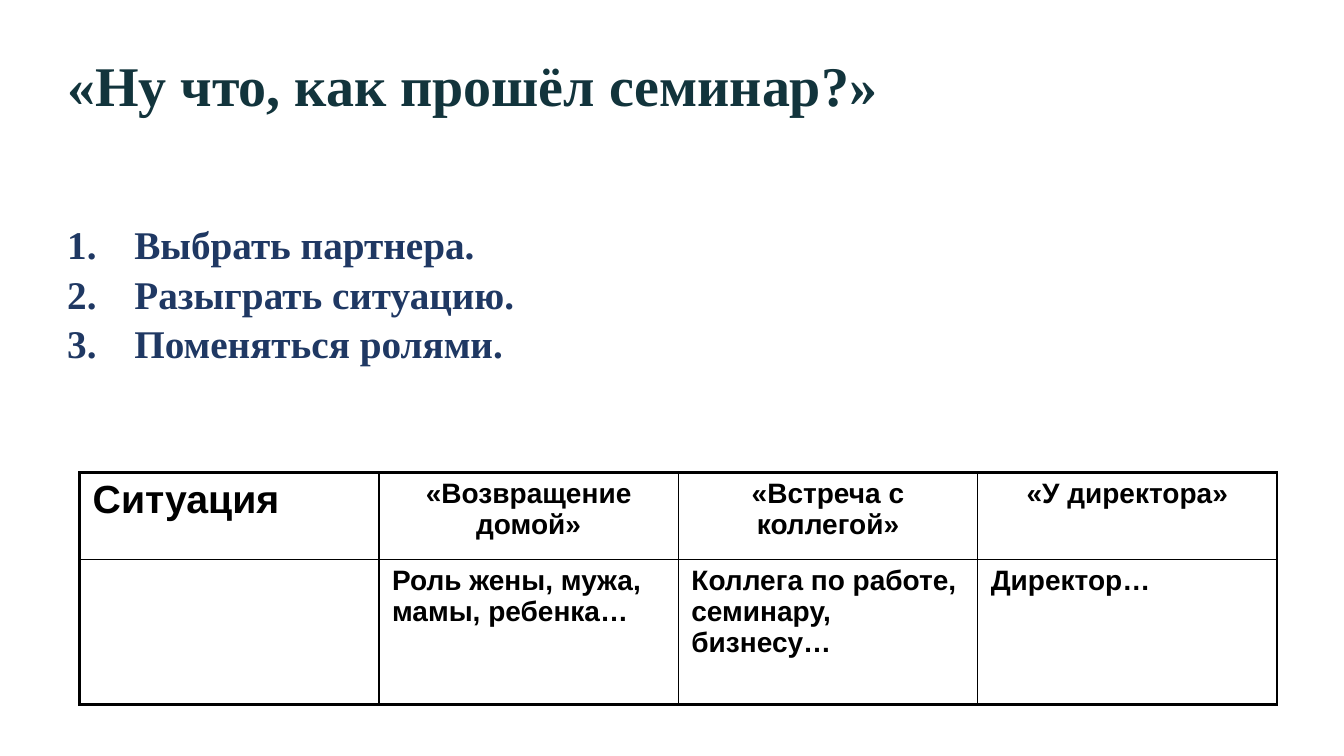
from lxml.etree import SubElement
from pptx import Presentation
from pptx.dml.color import RGBColor
from pptx.enum.text import MSO_ANCHOR, PP_ALIGN
from pptx.oxml.ns import qn
from pptx.util import Inches, Pt

TITLE_TEAL = RGBColor(0x12, 0x34, 0x3C)
STEP_NAVY = RGBColor(0x1F, 0x38, 0x63)
BLACK = RGBColor(0, 0, 0)
WHITE = RGBColor(0xFF, 0xFF, 0xFF)
SERIF, SANS = "Times New Roman", "Arial"
COLUMNS, ROWS = 40, 45

STEPS = ["Выбрать партнера.", "Разыграть ситуацию.", "Поменяться ролями."]
SITUATIONS = [
    ["Ситуация", "«Возвращение домой»", "«Встреча с коллегой»", "«У директора»"],
    ["", "Роль жены, мужа, мамы, ребенка…",
     "Коллега по работе, семинару, бизнесу…", "Директор…"],
]


class SeminarSlide:
    OUTER, INNER = 2.25, 1

    def __init__(self, deck):
        self.column = deck.slide_width / COLUMNS
        self.row = deck.slide_height / ROWS
        self.slide = deck.slides.add_slide(deck.slide_layouts[6])
        background = self.slide.background.fill
        background.solid()
        background.fore_color.rgb = WHITE

    def place(self, left, top, width, height):
        """Turn grid columns and rows into slide lengths."""
        return (int(left * self.column), int(top * self.row),
                int(width * self.column), int(height * self.row))

    def add_bold_run(self, paragraph, text, size, face, color):
        run = paragraph.add_run()
        run.text = text
        run.font.size, run.font.name, run.font.bold = Pt(size), face, True
        run.font.color.rgb = color

    def frame(self, *area):
        """Add a wrapping text box without margins."""
        frame = self.slide.shapes.add_textbox(*self.place(*area)).text_frame
        frame.word_wrap = True
        frame.vertical_anchor = MSO_ANCHOR.TOP
        frame.margin_left = frame.margin_right = 0
        frame.margin_top = frame.margin_bottom = 0
        return frame

    def title(self, text, *area):
        self.add_bold_run(self.frame(*area).paragraphs[0], text, 40, SERIF, TITLE_TEAL)

    def numbered_list(self, steps, *area):
        frame = self.frame(*area)
        indent = int(2 * self.column)
        for index, step in enumerate(steps):
            paragraph = frame.add_paragraph() if index else frame.paragraphs[0]
            properties = paragraph._p.get_or_add_pPr()
            properties.set("marL", str(indent))
            properties.set("indent", str(-indent))
            SubElement(properties, qn("a:buFont"), typeface="+mj-lt")
            SubElement(properties, qn("a:buAutoNum"), type="arabicPeriod")
            paragraph.line_spacing = 1.05
            self.add_bold_run(paragraph, step, 28, SERIF, STEP_NAVY)

    def border(self, cell, side, width):
        line = SubElement(cell._tc.get_or_add_tcPr(), qn(f"a:ln{side}"), w=str(Pt(width)))
        fill = SubElement(line, qn("a:solidFill"))
        SubElement(fill, qn("a:srgbClr"), val=str(BLACK))

    def table(self, texts, row_heights, *area):
        last_row, last_column = len(texts) - 1, len(texts[0]) - 1
        table = self.slide.shapes.add_table(
            last_row + 1, last_column + 1, *self.place(*area)).table
        table.first_row = table.horz_banding = False
        for row, height in zip(table.rows, row_heights):
            row.height = int(height * self.row)
        for r, row_texts in enumerate(texts):
            for c, text in enumerate(row_texts):
                cell = table.cell(r, c)
                cell.margin_left = cell.margin_right = Inches(0.13)
                cell.margin_top = cell.margin_bottom = Inches(0.05)
                edges = {"L": c == 0, "R": c == last_column,
                         "T": r == 0, "B": r == last_row}
                for side, outer in edges.items():
                    self.border(cell, side, self.OUTER if outer else self.INNER)
                cell.fill.background()
                if not text:
                    continue
                paragraph = cell.text_frame.paragraphs[0]
                corner = r == c == 0
                centred = r == 0 and not corner
                paragraph.alignment = PP_ALIGN.CENTER if centred else PP_ALIGN.LEFT
                self.add_bold_run(paragraph, text, 28 if corner else 20, SANS, BLACK)


def main():
    deck = Presentation()
    deck.slide_width, deck.slide_height = Inches(13.33), Inches(7.5)
    seminar = SeminarSlide(deck)
    seminar.title("«Ну что, как прошёл семинар?»", 2, 3, 36, 4)
    seminar.numbered_list(STEPS, 2, 13, 36.28, 8.46)
    seminar.table(SITUATIONS, (5.18, 8.6), 2.37, 28.14, 35.64, 13.78)
    deck.save("out.pptx")


if __name__ == "__main__":
    main()
